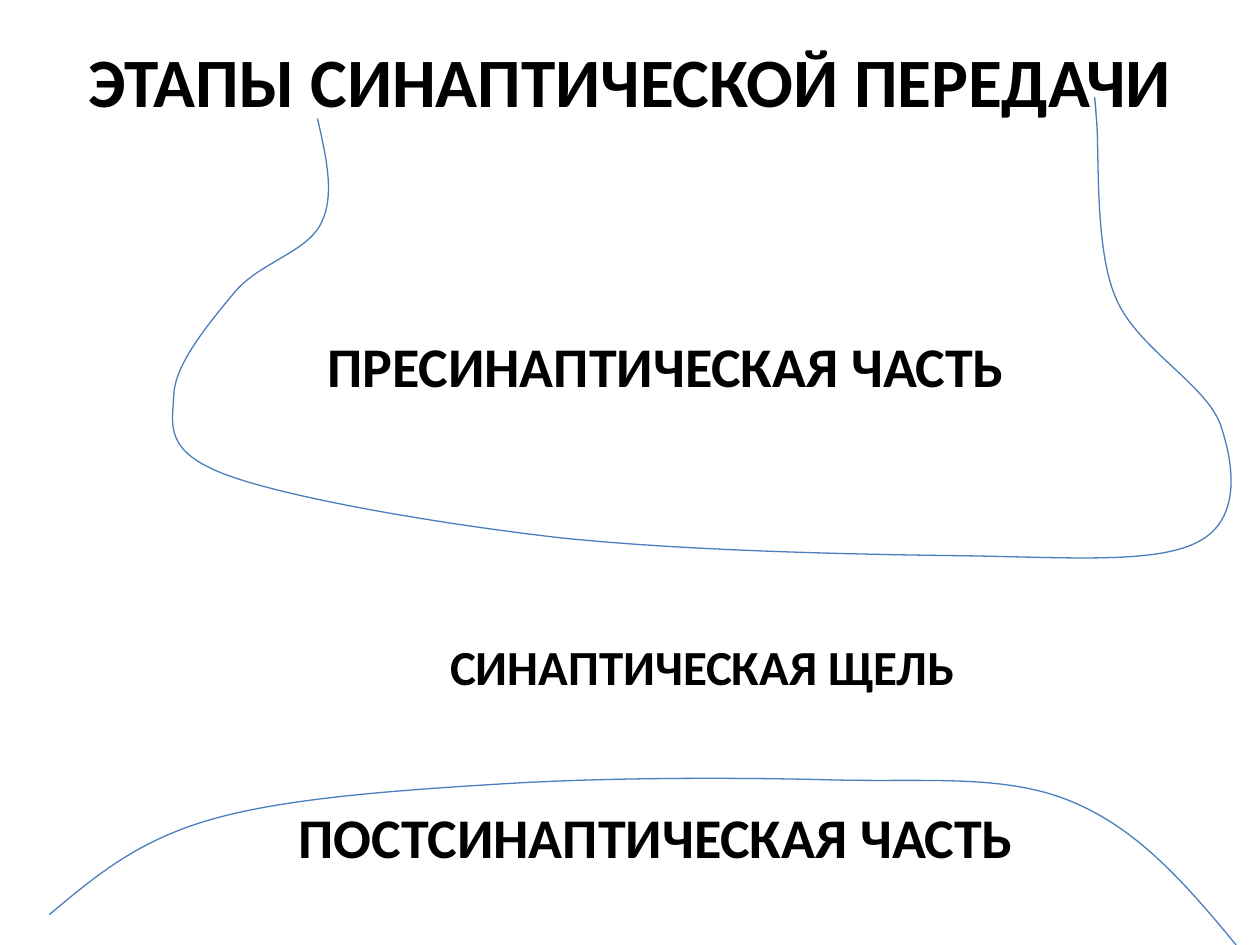
from pptx import Presentation
from pptx.dml.color import RGBColor
from pptx.enum.text import MSO_ANCHOR, PP_ALIGN
from pptx.oxml.ns import qn
from pptx.util import Inches, Pt
from lxml import etree

LEFT, CENTER = PP_ALIGN.LEFT, PP_ALIGN.CENTER
TOP = MSO_ANCHOR.TOP
COLORS = {"text": "000000", "membrane": "4B7EBC"}

prs = Presentation()
prs.slide_width, prs.slide_height = Inches(10), Inches(7.5)
slide = prs.slides.add_slide(prs.slide_layouts[6])


def add_label(text, left, top, width, height, size, align, inset=0.05):
    label = slide.shapes.add_textbox(Inches(left), Inches(top), Inches(width), Inches(height))
    frame = label.text_frame
    frame.word_wrap = True
    frame.vertical_anchor = TOP
    frame.margin_top = Inches(inset)
    frame.text = text
    paragraph = frame.paragraphs[0]
    paragraph.alignment = align
    font = paragraph.runs[0].font
    font.name, font.size, font.bold = "Calibri", Pt(size), True
    font.color.rgb = RGBColor.from_string(COLORS["text"])


def add_membrane(points):
    points = [(Inches(x), Inches(y)) for x, y in points]
    builder = slide.shapes.build_freeform(*points[0], scale=1.0)
    builder.add_line_segments(points[1:], close=False)
    membrane = builder.convert_to_shape()
    membrane.shadow.inherit = False
    membrane.fill.background()
    membrane.line.color.rgb = RGBColor.from_string(COLORS["membrane"])
    membrane.line.width = Pt(0.75)
    outline = next(membrane.element.iter(qn("a:path")))
    segments = outline.findall(qn("a:lnTo"))
    for i in range(0, len(segments), 3):
        curve = etree.SubElement(outline, qn("a:cubicBezTo"))
        for segment in segments[i:i + 3]:
            curve.append(segment[0])
            outline.remove(segment)


presynaptic = [
    (2.52, 0.94),
    (2.59, 1.25), (2.66, 1.55), (2.55, 1.77),
    (2.44, 2), (2.07, 2.08), (1.87, 2.31),
    (1.68, 2.54), (1.39, 2.88), (1.38, 3.13),
    (1.37, 3.37), (1.29, 3.58), (1.8, 3.77),
    (2.32, 3.96), (3.5, 4.16), (4.46, 4.27),
    (5.43, 4.37), (6.74, 4.4), (7.58, 4.41),
    (8.42, 4.42), (9.14, 4.48), (9.49, 4.31),
    (9.85, 4.14), (9.8, 3.71), (9.69, 3.38),
    (9.58, 3.05), (9.01, 2.76), (8.85, 2.35),
    (8.68, 1.94), (8.73, 1.16), (8.7, 0.92),
    (8.68, 0.67), (8.69, 0.79), (8.7, 0.9),
]
postsynaptic = [
    (0.39, 7.26),
    (0.74, 6.97), (1.08, 6.67), (1.69, 6.5),
    (2.29, 6.33), (3.19, 6.27), (4.01, 6.22),
    (4.83, 6.17), (5.84, 6.17), (6.59, 6.19),
    (7.34, 6.21), (7.97, 6.14), (8.5, 6.36),
    (9.04, 6.58), (9.43, 7.04), (9.81, 7.5),
]

add_label("ЭТАПЫ СИНАПТИЧЕСКОЙ ПЕРЕДАЧИ", 0.5, 0.3, 9, 1.25, 39.6, CENTER, inset=0)
for membrane_points in (presynaptic, postsynaptic):
    add_membrane(membrane_points)
add_label("ПРЕСИНАПТИЧЕСКАЯ ЧАСТЬ", 2.5, 2.58, 5.86, 1.18, 32, LEFT)
add_label("ПОСТСИНАПТИЧЕСКАЯ ЧАСТЬ", 2.27, 6.32, 6.56, 1.18, 32, LEFT)
add_label("СИНАПТИЧЕСКАЯ ЩЕЛЬ", 2.06, 5, 7.03, 0.57, 28, CENTER)

prs.save("out.pptx")
